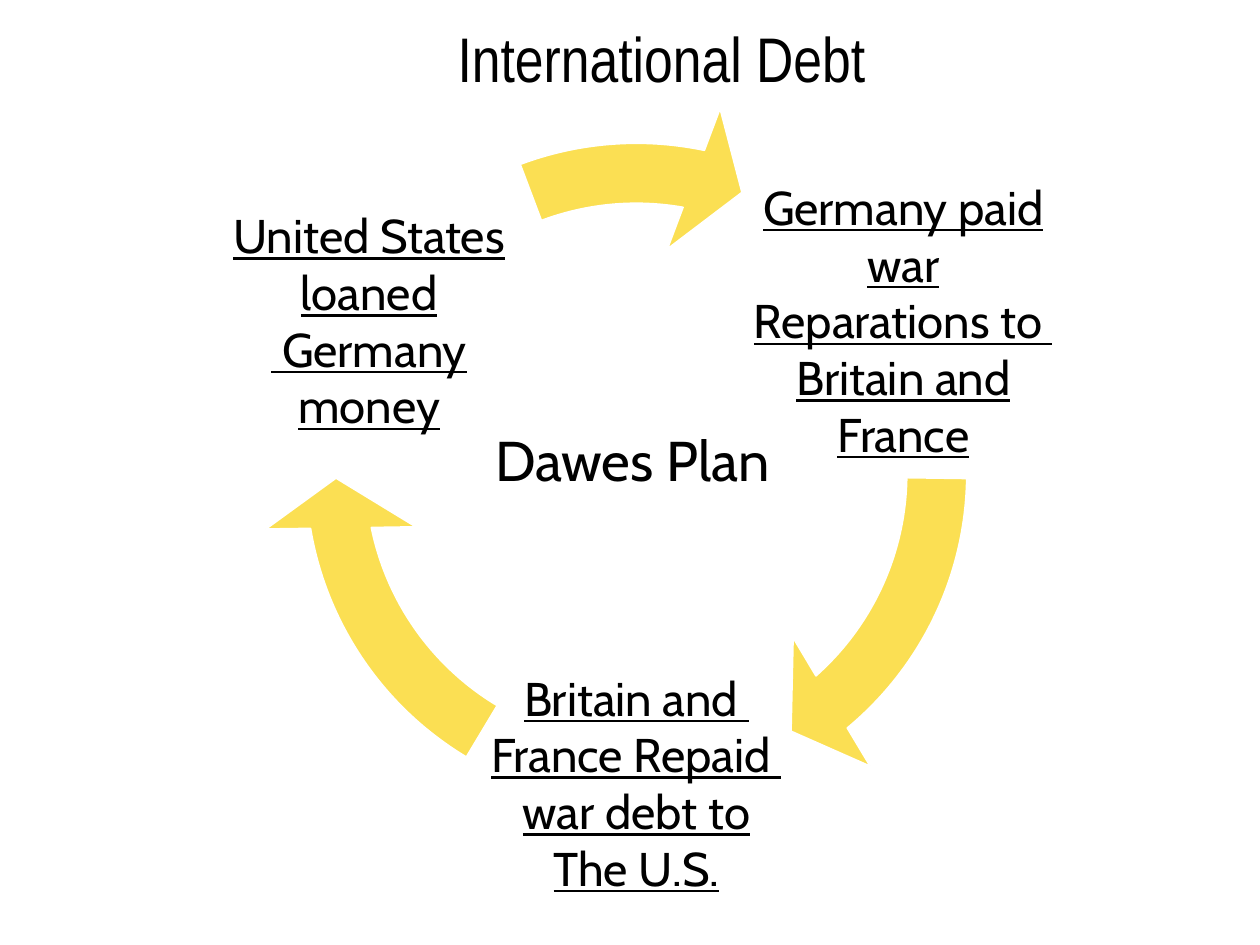
import pptx
import pptx.util
import pptx.dml.color
import pptx.enum.shapes
import pptx.enum.text

Cm = pptx.util.Cm
Pt = pptx.util.Pt
ALIGN = pptx.enum.text.PP_ALIGN
ANCHOR = pptx.enum.text.MSO_ANCHOR

COLORS = {"text": "000000", "arrow": "FBDF53", "outline": "FFFFFF"}
STEP_SIZE = 6.4
CYCLE = (5.26, 1.98, 15.14, 15.14)

STEPS = [
    (15.01, 3.25, ["Germany paid war", "Reparations to ", "Britain and France"]),
    (9.63, 12.57, ["Britain and ", "France Repaid ", "war debt to", "The U.S."]),
    (4.24, 3.25, ["United States loaned", " Germany money"]),
]
ARROW_ANGLES = [(29.67, 0.5), (101.75, 72.58), (168.6, 149.65)]


class DebtSlide:
    def __init__(self, slide):
        self.slide = slide
        self.font = "Cabin"

    def color(self, name):
        return pptx.dml.color.RGBColor.from_string(COLORS[name])

    def text(self, box, lines, size, font=None, align=ALIGN.CENTER,
             anchor=ANCHOR.MIDDLE, inset=None, underline=False):
        shape = self.slide.shapes.add_textbox(*map(Cm, box))
        frame = shape.text_frame
        frame.word_wrap = True
        frame.vertical_anchor = anchor
        if inset is not None:
            frame.margin_left = frame.margin_right = Cm(inset)
            frame.margin_top = frame.margin_bottom = Cm(inset)
        for index, line in enumerate(lines):
            paragraph = frame.add_paragraph() if index else frame.paragraphs[0]
            paragraph.alignment = align
            run = paragraph.add_run()
            run.text = line
            run.font.name = font or self.font
            run.font.size = Pt(size)
            run.font.color.rgb = self.color("text")
            if underline:
                run.font.underline = True

    def step(self, left, top, lines):
        self.text((left, top, STEP_SIZE, STEP_SIZE), lines, 27,
                  inset=0.1, underline=True)

    def arrow(self, end, start):
        shape = self.slide.shapes.add_shape(
            pptx.enum.shapes.MSO_SHAPE.CIRCULAR_ARROW, *map(Cm, CYCLE))
        for index, value in enumerate((0.08, 5.75, end, start, 0.1)):
            shape.adjustments[index] = value
        shape.shadow.inherit = False
        shape.fill.solid()
        shape.fill.fore_color.rgb = self.color("arrow")
        shape.line.color.rgb = self.color("outline")
        shape.line.width = Pt(1)


def main():
    presentation = pptx.Presentation()
    presentation.slide_width = Cm(25.4)
    presentation.slide_height = Cm(19.05)
    debt = DebtSlide(presentation.slides.add_slide(presentation.slide_layouts[6]))
    for step, angles in zip(STEPS, ARROW_ANGLES):
        debt.step(*step)
        debt.arrow(*angles)
    debt.text((1.27, 0.2, 24.13, 1.9), ["International Debt"], 36, font="Arial Narrow")
    debt.text((9.73, 8.46, 6.78, 1.63), ["Dawes Plan"], 32,
              align=ALIGN.LEFT, anchor=ANCHOR.TOP)
    presentation.save("out.pptx")


if __name__ == "__main__":
    main()
